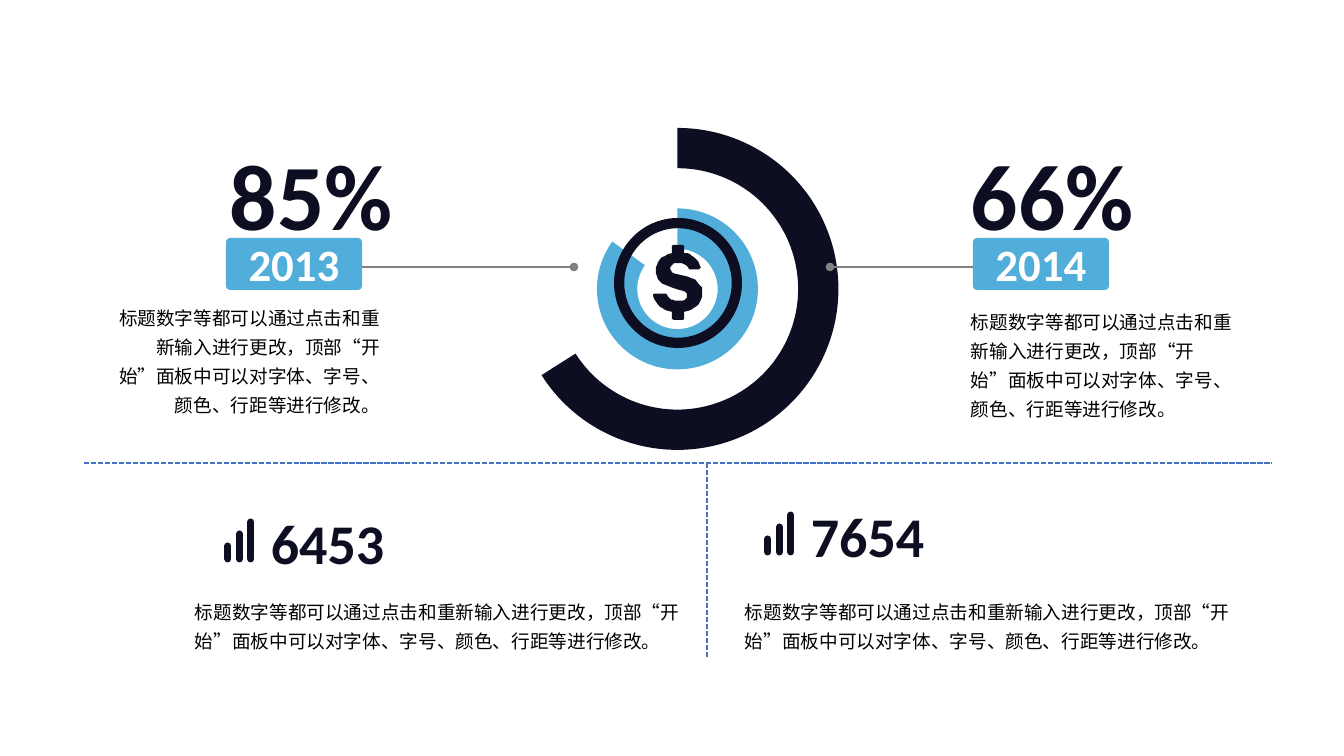
from dataclasses import dataclass

from lxml.etree import SubElement
from pptx import Presentation
from pptx.chart.data import CategoryChartData
from pptx.dml.color import RGBColor
from pptx.enum.chart import XL_CHART_TYPE as ChartType
from pptx.enum.dml import MSO_LINE as Dash
from pptx.enum.shapes import MSO_CONNECTOR as Connector
from pptx.enum.shapes import MSO_SHAPE as Preset
from pptx.enum.text import MSO_ANCHOR as Anchor
from pptx.enum.text import MSO_AUTO_SIZE as AutoSize
from pptx.enum.text import PP_ALIGN as Align
from pptx.oxml.ns import qn
from pptx.util import Pt

SLIDE_WIDTH, SLIDE_HEIGHT = 1344, 756
SCALE = 12192000 / SLIDE_WIDTH


@dataclass(frozen=True)
class Theme:
    dark: str = "0E0E23"
    accent: str = "51ADD9"
    leader: str = "808080"
    divider: str = "4472C4"
    white: str = "FFFFFF"
    black: str = "000000"
    spare: tuple = ("5B9BD5", "ED7D31")
    latin: str = "Calibri"
    chinese: str = "Noto Sans CJK SC"
    percent_size: float = 66.7
    metric_size: float = 40
    badge_size: float = 32
    body_size: float = 13.3
    chart_size: float = 10


@dataclass(frozen=True)
class Box:
    left: int
    top: int
    width: int
    height: int

    @property
    def right(self):
        return self.left + self.width

    @property
    def bottom(self):
        return self.top + self.height

    def emu(self):
        return [px(v) for v in (self.left, self.top, self.width, self.height)]


THEME = Theme()
BODY = "标题数字等都可以通过点击和重新输入进行更改，顶部“开始”面板中可以对字体、字号、颜色、行距等进行修改。"
DOLLAR_GRID = (49, 74)
DOLLAR = [
    (49, 48), (49, 45), (49, 42), (47, 40), (46, 39), (43, 35), (42, 34), (39, 33),
    (34, 31), (25, 29), (21, 28), (19, 27), (18, 25), (17, 23), (18, 21), (19, 20),
    (21, 18), (25, 18), (29, 18), (31, 19), (33, 20), (35, 22), (36, 24), (46, 24),
    (47, 23), (48, 22), (47, 21), (46, 18), (45, 16), (43, 14), (41, 12), (39, 11),
    (37, 9), (34, 8), (31, 8), (31, 1), (30, 0), (20, 0), (19, 1), (19, 8),
    (15, 9), (12, 11), (9, 12), (7, 14), (5, 17), (4, 20), (3, 22), (3, 26),
    (3, 28), (4, 31), (5, 34), (7, 36), (9, 38), (14, 40), (19, 42), (25, 44),
    (29, 45), (32, 46), (34, 48), (34, 52), (32, 54), (30, 55), (25, 55), (22, 55),
    (20, 54), (18, 54), (16, 52), (15, 51), (14, 49), (13, 48), (1, 48), (0, 49),
    (0, 50), (1, 53), (3, 56), (5, 59), (7, 61), (9, 62), (12, 64), (15, 65),
    (19, 66), (19, 73), (21, 74), (30, 74), (31, 73), (31, 66), (35, 65), (38, 64),
    (41, 62), (44, 60), (46, 58), (48, 54), (49, 51),
]


def px(value):
    return round(value * SCALE)


def rgb(color):
    return RGBColor.from_string(color)


def paint(shape, color):
    shape.shadow.inherit = False
    shape.fill.solid()
    shape.fill.fore_color.rgb = rgb(color)
    shape.line.fill.background()


def write(frame, text, size, color, font=THEME.latin, bold=True, align=Align.LEFT):
    para = frame.paragraphs[0]
    para.alignment = align
    span = para.add_run()
    span.text = text
    span.font.size = Pt(size)
    span.font.bold = bold
    span.font.name = font
    span.font.color.rgb = rgb(color)
    return para, span


def add_text(slide, box, text, size, wrap=False, **style):
    frame = slide.shapes.add_textbox(*box.emu()).text_frame
    frame.word_wrap = wrap
    frame.auto_size = AutoSize.SHAPE_TO_FIT_TEXT
    return write(frame, text, size, **style)


def add_body(slide, box, align=Align.LEFT):
    para, span = add_text(slide, box, BODY, THEME.body_size, wrap=True, color=THEME.black,
                          font=THEME.chinese, bold=False, align=align)
    para.line_spacing = 1.3
    properties = span.font._element
    properties.set("lang", "zh-CN")
    SubElement(properties, qn("a:ea"), typeface=THEME.chinese)


def add_line(shapes, start, end, color, width, dash=None, dot=False, rounded=False):
    line = shapes.add_connector(Connector.STRAIGHT, *map(px, start + end))
    line.line.color.rgb = rgb(color)
    line.line.width = Pt(width)
    if dash:
        line.line.dash_style = dash
    outline = line._element.spPr.find(qn("a:ln"))
    if rounded:
        outline.set("cap", "rnd")
    if dot:
        SubElement(outline, qn("a:tailEnd"), type="oval")
    SubElement(line._element.spPr, qn("a:effectLst"))


def add_rings(slide, box, diameter):
    data = CategoryChartData()
    data.categories = ["1", "2"]
    rings = [((85, 15), (THEME.accent, None)), ((0, 0), THEME.spare),
             ((66, 34), (THEME.dark, None))]
    for number, (values, _) in enumerate(rings, 1):
        data.add_series(f"Series {number}", values)
    chart = slide.shapes.add_chart(ChartType.DOUGHNUT, *box.emu(), data).chart
    chart.has_legend = False
    chart.has_title = False
    chart.font.name = THEME.latin
    chart.font.size = Pt(THEME.chart_size)
    chart.font.color.rgb = rgb(THEME.black)
    plot = chart.plots[0]
    plot.vary_by_categories = False
    plot.has_data_labels = False
    for series, (_, colors) in zip(plot.series, rings):
        for index, color in enumerate(colors):
            form = series.points[index].format
            form.line.fill.background()
            if color:
                form.fill.solid()
                form.fill.fore_color.rgb = rgb(color)
            else:
                form.fill.background()
    plot._element.find(qn("c:holeSize")).set("val", "57")
    area = plot._element.getparent()
    for empty in area.findall(qn("c:layout")):
        area.remove(empty)
    layout = SubElement(area, qn("c:layout"))
    area.insert(0, layout)
    manual = SubElement(layout, qn("c:manualLayout"))
    width, height = diameter / box.width, diameter / box.height
    for tag, value in [("layoutTarget", "inner"), ("xMode", "edge"), ("yMode", "edge"),
                       ("x", (1 - width) / 2), ("y", (1 - height) / 2),
                       ("w", width), ("h", height)]:
        SubElement(manual, qn(f"c:{tag}"), val=str(value))


def add_year(slide, box, percent, year, percent_left, badge_left, dot_x, align):
    badge = Box(box.left + badge_left, box.top + 106, 136, 52)
    edge = badge.right if dot_x > badge.right else badge.left
    middle = box.top + 135
    add_line(slide.shapes, (edge, middle), (dot_x, middle), THEME.leader, 2, dot=True)
    shape = slide.shapes.add_shape(Preset.ROUNDED_RECTANGLE, *badge.emu())
    shape.adjustments[0] = 0.08
    paint(shape, THEME.accent)
    shape.text_frame.vertical_anchor = Anchor.MIDDLE
    write(shape.text_frame, year, THEME.badge_size, THEME.white, align=Align.CENTER)
    add_text(slide, Box(box.left + percent_left, box.top, 184, 123), percent,
             THEME.percent_size, color=THEME.dark)
    add_body(slide, Box(box.left, box.bottom - 128, box.width, 128), align)


def add_metric(slide, box, number, icon_left):
    left, base = box.left + icon_left, box.top + 55
    icon = slide.shapes.add_group_shape()
    for index in range(3):
        x = left + 11.5 * index
        add_line(icon.shapes, (x, base - 13 - 12 * index), (x, base), THEME.dark, 5,
                 rounded=True)
    add_text(slide, Box(left + 33, box.top, 135, 78), number, THEME.metric_size,
             color=THEME.dark)
    add_body(slide, Box(box.left, box.bottom - 69, box.width, 69))


def add_coin(slide, box):
    ring = slide.shapes.add_shape(Preset.DONUT, *box.emu())
    ring.adjustments[0] = 0.08
    paint(ring, THEME.dark)
    width, height = 49, 75
    columns, rows = DOLLAR_GRID
    outline = slide.shapes.build_freeform(
        *DOLLAR[0], scale=(px(width) / columns, px(height) / rows))
    outline.add_line_segments(DOLLAR[1:], close=True)
    paint(outline.convert_to_shape(px(box.left + 39), px(box.top + 27)), THEME.dark)


def add_dividers(slide, box, split):
    for start, end in [((box.left, box.top), (box.right, box.top)),
                       ((split, box.top), (split, box.bottom))]:
        add_line(slide.shapes, start, end, THEME.divider, 1.25, dash=Dash.SQUARE_DOT)


def main():
    deck = Presentation()
    deck.slide_width, deck.slide_height = px(SLIDE_WIDTH), px(SLIDE_HEIGHT)
    slide = deck.slides.add_slide(deck.slide_layouts[6])
    add_rings(slide, Box(414, 113, 527, 352), 322)
    add_year(slide, Box(103, 132, 287, 291), "85%", "2013", 117, 123, 574, Align.RIGHT)
    add_year(slide, Box(961, 132, 286, 295), "66%", "2014", 0, 12, 830, Align.LEFT)
    add_metric(slide, Box(185, 504, 513, 154), "6453", 43)
    add_metric(slide, Box(735, 497, 513, 161), "7654", 33)
    add_coin(slide, Box(614, 218, 128, 130))
    add_dividers(slide, Box(84, 463, 1188, 194), 707)
    deck.save("out.pptx")


if __name__ == "__main__":
    main()
